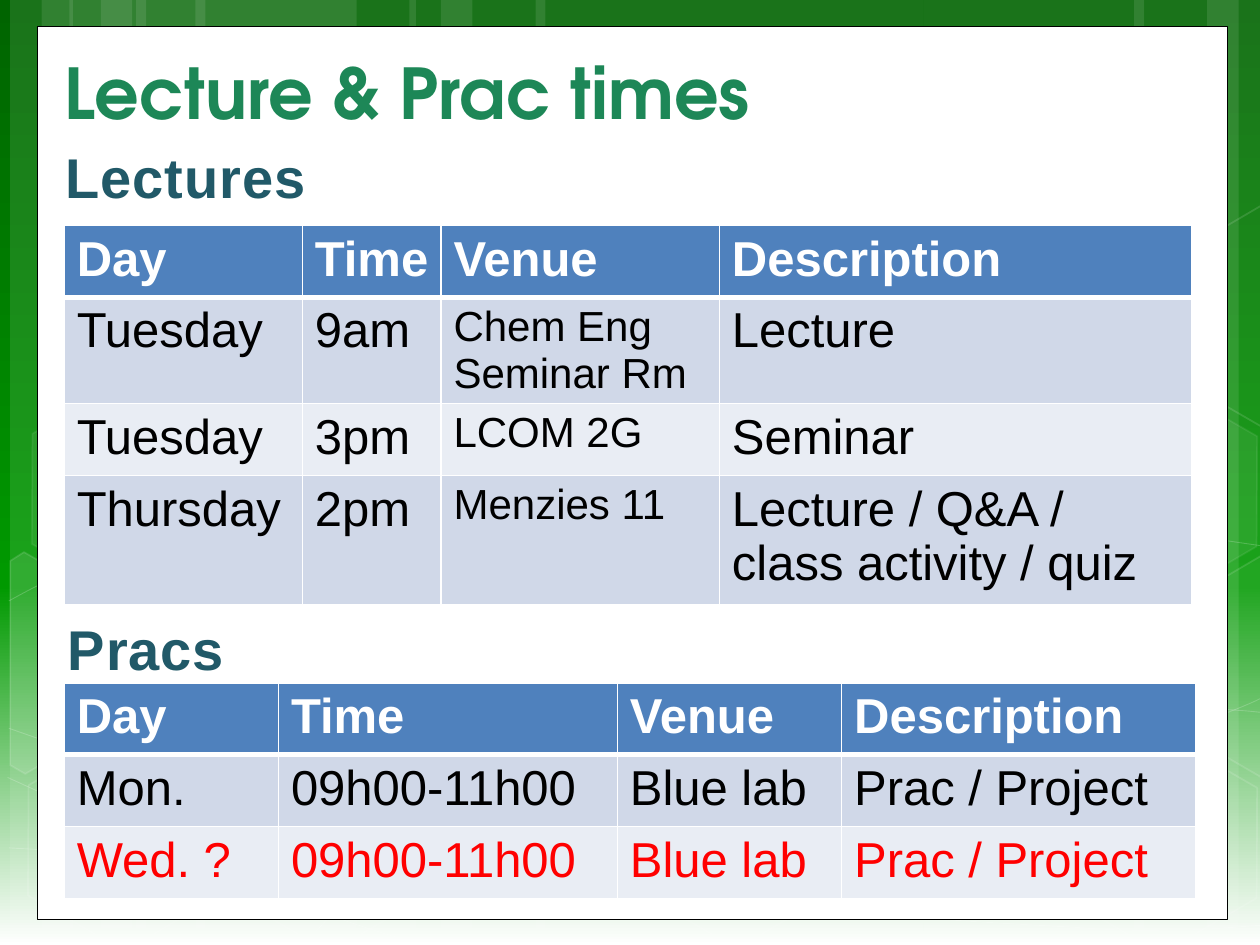
from math import cos, pi, sin

from lxml import etree
from pptx import Presentation
from pptx.dml.color import RGBColor
from pptx.enum.shapes import MSO_SHAPE
from pptx.enum.text import MSO_ANCHOR, MSO_AUTO_SIZE, PP_ALIGN
from pptx.oxml.ns import qn
from pptx.util import Inches, Pt

RECT, HEX = MSO_SHAPE.RECTANGLE, MSO_SHAPE.HEXAGON
BOTTOM = MSO_ANCHOR.BOTTOM
FIT = MSO_AUTO_SIZE.SHAPE_TO_FIT_TEXT
LEFT, CENTER = PP_ALIGN.LEFT, PP_ALIGN.CENTER
INK = {"white": "FFFFFF", "black": "000000", "red": "FF0000",
       "title": "1D8757", "label": "215968", "head": "4F81BD",
       "odd": "D0D8E8", "even": "E9EDF4", "dark": "006400", "green": "009900"}

BARS = [(1.08, 1.75, 0), (0.08, 0.5, 0), (0.33, 0.83, 0), (1.55, 1.75, 0),
        (0.55, 0.5, 0), (0.8, 0.83, 0), (7.33, 1.75, 180), (9.58, 0.5, 180),
        (9, 0.83, 180), (4.25, 3.08, 0), (3.25, 0.5, 0), (3.5, 0.83, 0)]
CURVES = [
    [(0.07, 6.73), (0.61, 6.76), (1.15, 6.79), (1.9, 6.78), (2.65, 6.77),
     (3.58, 6.75), (4.58, 6.65), (5.58, 6.55), (7, 6.36), (7.92, 6.17),
     (8.83, 5.98), (9.77, 5.68), (10.07, 5.51)],
    [(0.07, 4.77), (0.36, 4.61), (0.65, 4.46), (1.21, 4.31), (1.78, 4.16),
     (2.59, 3.94), (3.47, 3.87), (4.36, 3.8), (5.44, 3.79), (6.54, 3.87),
     (7.64, 3.95), (9.47, 4.26), (10.07, 4.34)],
    [(0.06, 6.17), (1.27, 6.72), (2.47, 7.27), (3.34, 7.49)],
    [(0.07, 5.78), (0.38, 5.89), (0.7, 6), (1.28, 6.16), (1.86, 6.31),
     (2.73, 6.56), (3.57, 6.73), (4.4, 6.9), (5.45, 7.08), (6.28, 7.18),
     (7.11, 7.29), (8, 7.33), (8.53, 7.36), (9.05, 7.4), (9.19, 7.38),
     (9.45, 7.38), (9.71, 7.37), (9.89, 7.35), (10.07, 7.34)],
    [(2.42, 7.49), (2.6, 7.29), (2.78, 7.09), (3.02, 6.91), (3.26, 6.73),
     (3.6, 6.53), (3.88, 6.39), (4.16, 6.25), (4.33, 6.19), (4.7, 6.09),
     (5.06, 5.99), (5.73, 5.85), (6.08, 5.78), (6.44, 5.71), (6.49, 5.71),
     (6.8, 5.69), (7.11, 5.66), (7.6, 5.63), (7.94, 5.62), (8.29, 5.61),
     (8.86, 5.62), (8.86, 5.62), (9.08, 5.62), (9.31, 5.62), (9.53, 5.62),
     (9.71, 5.63), (9.88, 5.64), (9.97, 5.65), (10.06, 5.66), (10.03, 5.65),
     (10.06, 5.66)],
]
CELLS = [(4.97, 5.89, 6, 12), (0.11, 5.91, 0, 12), (0.14, 3.12, 7, 8),
         (1.74, 5.92, 0, 12), (8.34, 5.93, 0, 12), (8.34, 3.14, 7, 8)]
PARTS = [
    ([(0.08, 4.45), (0.19, 4.38), (0.96, 4.82), (0.95, 5.7), (0.2, 6.14),
      (0.08, 6.07)], (0.36, 5.35), 10),
    ([(9.26, 4.85), (10.01, 4.41), (10.09, 4.46), (10.09, 6.13),
      (10.02, 6.17), (9.26, 5.73)], (9.85, 5.2), 4),
    ([(9.26, 2.07), (10.01, 1.63), (10.1, 1.68), (10.09, 3.35),
      (10.02, 3.39), (9.26, 2.95)], (9.85, 2.41), 0),
]
HEAD = ["Day", "Time", "Venue", "Description"]
TALKS = [HEAD,
         ["Tuesday", "9am", "Chem Eng Seminar Rm", "Lecture"],
         ["Tuesday", "3pm", "LCOM 2G", "Seminar"],
         ["Thursday", "2pm", "Menzies 11", "Lecture / Q&A / class activity / quiz"]]
PRACS = [HEAD] + [[day, "09h00-11h00", "Blue lab", "Prac / Project"]
                  for day in ("Mon.", "Wed. ?")]


def color(name):
    return RGBColor.from_string(INK[name])


def tint(parent, name, alpha=100):
    fill = etree.SubElement(parent, qn("a:solidFill"))
    tone = etree.SubElement(fill, qn("a:srgbClr"), val=INK[name])
    if alpha < 100:
        etree.SubElement(tone, qn("a:alpha"), val=str(alpha * 1000))
    return fill


def paint(shape, fill=0, line=0, width=1):
    shape.shadow.inherit = False
    shape.fill.background()
    shape.line.fill.background()
    props = shape.element.spPr
    for parent, alpha in ((props, fill), (shape.line._get_or_add_ln(), line)):
        if alpha:
            old = parent.find(qn("a:noFill"))
            parent.replace(old, tint(parent, "white", alpha))
    if line:
        shape.line.width = Pt(width)


def outline(slide, spots, close):
    spots = [(Inches(x), Inches(y)) for x, y in spots]
    pen = slide.shapes.build_freeform(*spots[0])
    pen.add_line_segments(spots[1:], close=close)
    return pen.convert_to_shape()


def curve(slide, knots):
    shape = outline(slide, knots[::3], False)
    for i, line in enumerate(list(shape.element.iter(qn("a:lnTo")))):
        arc = etree.Element(qn("a:cubicBezTo"))
        for x, y in knots[3 * i + 1:3 * i + 4]:
            etree.SubElement(arc, qn("a:pt"), x=str(Inches(x) - shape.left),
                             y=str(Inches(y) - shape.top))
        line.getparent().replace(line, arc)
    return shape


def turn(spots, mid):
    c, s = cos(pi / 6), sin(pi / 6)
    return [(mid[0] + (x - mid[0]) * c + (y - mid[1]) * s,
             mid[1] + (y - mid[1]) * c - (x - mid[0]) * s) for x, y in spots]


def backdrop(slide, box):
    fill = slide.background.fill
    fill.gradient()
    fill.gradient_angle = 270
    stops = slide.background._cSld.find(".//" + qn("a:gsLst"))
    for stop in list(stops):
        stops.remove(stop)
    for pos, name in ((0, "dark"), (62, "green"), (100, "white")):
        stop = etree.SubElement(stops, qn("a:gs"), pos=str(pos * 1000))
        etree.SubElement(stop, qn("a:srgbClr"), val=INK[name])
    for x, w, spin in BARS:
        bar = slide.shapes.add_shape(RECT, Inches(x), 0, Inches(w), Inches(7.5))
        bar.rotation = spin
        paint(bar, 10)
    for knots in CURVES:
        paint(curve(slide, knots), 0, 20, 0.5)
    for x, y, fade, edge in CELLS:
        cell = slide.shapes.add_shape(HEX, Inches(x), Inches(y), Inches(1.75), Inches(1.52))
        cell.adjustments[0] = 0.285
        cell.rotation = 30
        paint(cell, fade, edge)
    for spots, mid, fade in PARTS:
        part = outline(slide, turn(spots, mid), True)
        part.rotation = 30
        paint(part, fade, 12)
    panel = slide.shapes.add_shape(RECT, *map(Inches, box))
    paint(panel, 100, 100, 0.5)
    panel.line.color.rgb = color("black")


def write(para, text, size, name, bold, face="Arial"):
    run = para.add_run()
    run.text = text
    font = run.font
    font.size, font.bold, font.name = Pt(size), bold, face
    font.color.rgb = color(name)
    return run


def heading(slide, box, text):
    title = slide.shapes.title
    title.left, title.top, title.width, title.height = map(Inches, box)
    slide.shapes._spTree.append(title.element)
    title.text_frame.vertical_anchor = BOTTOM
    para = title.text_frame.paragraphs[0]
    para.alignment = LEFT
    write(para, text, 40, "title", True, "TeX Gyre Adventor")


def label(slide, box, text):
    frame = slide.shapes.add_textbox(*map(Inches, box)).text_frame
    frame.word_wrap = False
    frame.auto_size = FIT
    para = frame.paragraphs[0]
    para.alignment = CENTER
    run = write(para, text, 32, "label", True)
    run.font._element.set("spc", "50")


def border(cell, row):
    props = cell._tc.get_or_add_tcPr()
    for i, side in enumerate("LRTB"):
        thick = (row, side) in ((0, "B"), (1, "T"))
        line = etree.Element(qn("a:ln" + side), w=str(Pt(3 if thick else 1)))
        tint(line, "white")
        props.insert(i, line)


def grid(slide, box, rows, cols, highs, sizes, inks):
    table = slide.shapes.add_table(len(rows), len(cols), *map(Inches, box)).table
    for col, w in zip(table.columns, cols):
        col.width = Inches(w)
    for r, texts in enumerate(rows):
        table.rows[r].height = Inches(highs[r])
        for c, text in enumerate(texts):
            cell = table.cell(r, c)
            cell.fill.solid()
            cell.fill.fore_color.rgb = color("head" if r == 0 else "odd" if r % 2 else "even")
            border(cell, r)
            size = sizes[c] if r else 28
            write(cell.text_frame.paragraphs[0], text, size, inks[r], r == 0)


def main():
    deck = Presentation()
    deck.slide_width, deck.slide_height = Inches(10), Inches(7.5)
    slide = deck.slides.add_slide(deck.slide_layouts[5])
    backdrop(slide, (0.3, 0.21, 9.44, 7.09))
    heading(slide, (0.41, 0.2, 8.38, 0.91), "Lecture & Prac times")
    grid(slide, (0.51, 1.79, 8.95, 3.07), TALKS, (1.89, 1.1, 2.21, 3.75),
         (0.57, 0.57, 0.57, 1.03), (28, 28, 24, 28), ("white", "black", "black", "black"))
    label(slide, (0.41, 1.08, 2.13, 0.64), "Lectures")
    grid(slide, (0.51, 5.42, 8.98, 1.7), PRACS, (1.7, 2.69, 1.78, 2.81),
         (0.57, 0.57, 0.57), (28, 28, 28, 28), ("white", "black", "red"))
    label(slide, (0.43, 4.83, 1.46, 0.64), "Pracs")
    deck.save("out.pptx")


if __name__ == "__main__":
    main()
